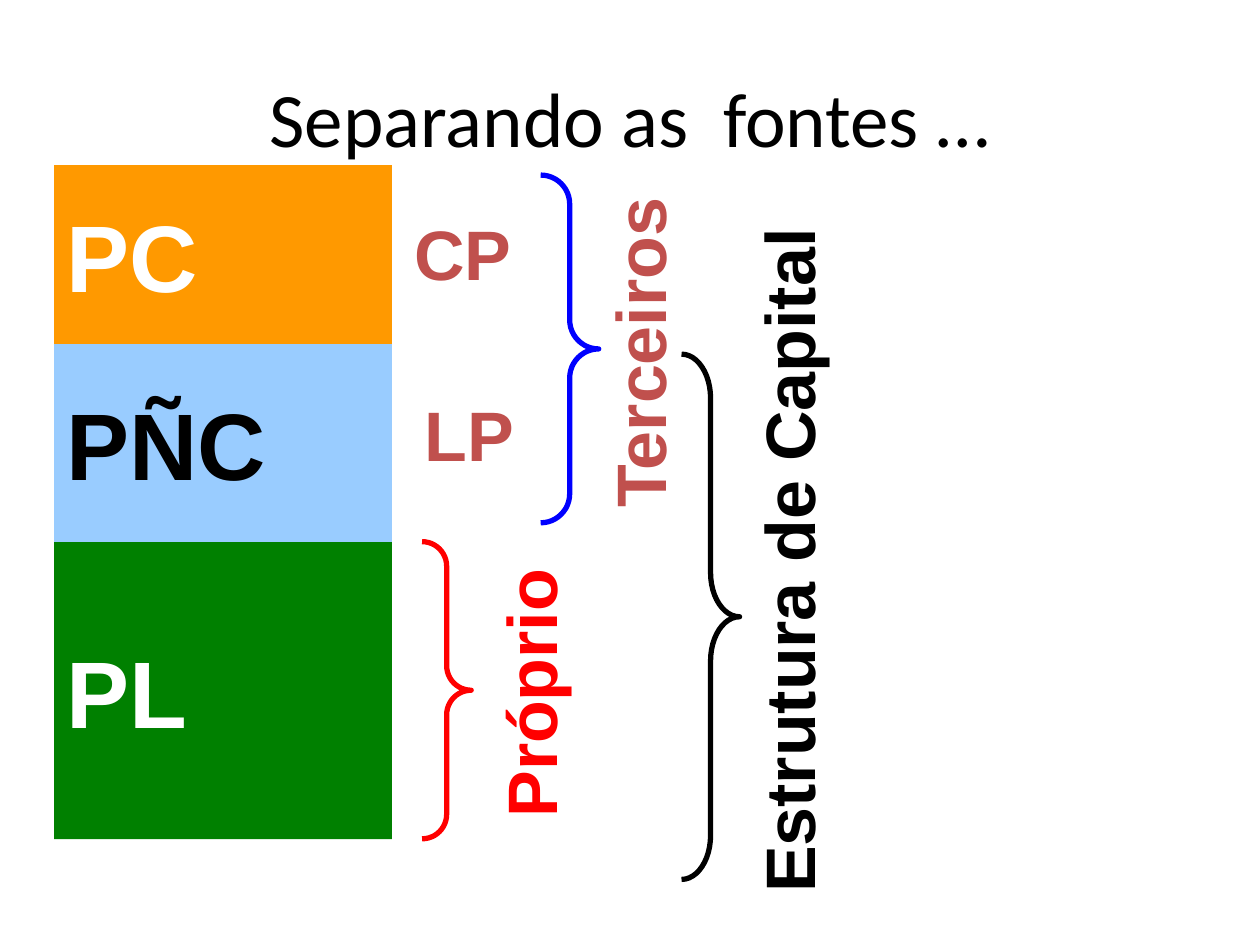
from pptx import Presentation
from pptx.dml.color import RGBColor
from pptx.enum.shapes import MSO_SHAPE as Shape
from pptx.enum.text import MSO_ANCHOR as Anchor, MSO_AUTO_SIZE as AutoSize, PP_ALIGN as Align
from pptx.util import Cm, Pt

COLORS = {
    "black": "000000", "white": "FFFFFF", "orange": "FF9900", "sky": "99CCFF",
    "green": "008000", "red": "FF0000", "blue": "0000FF", "brick": "C0504D",
}


def color(name):
    """Return the named colour."""
    return RGBColor.from_string(COLORS[name])


def write(shape, text, size, ink, font="Arial", bold=True, align=Align.LEFT):
    """Put one formatted paragraph in a shape."""
    para = shape.text_frame.paragraphs[0]
    para.text = text
    para.alignment = align
    para.font.name = font
    para.font.size = Pt(size)
    para.font.bold = bold
    para.font.color.rgb = color(ink)


def add_title(page, text):
    """Place and format the title placeholder."""
    title = page.shapes.title
    title.left, title.top, title.width, title.height = Cm(1.27), Cm(0.76), Cm(22.86), Cm(3.18)
    title.text_frame.vertical_anchor = Anchor.MIDDLE
    write(title, text, 44, "black", "Calibri", False, Align.CENTER)


def add_block(page, text, top, height, fill, ink):
    """Add one filled block of the balance sheet column."""
    block = page.shapes.add_shape(Shape.RECTANGLE, Cm(1.09), Cm(top), Cm(6.81), Cm(height))
    block.shadow.inherit = False
    block.fill.solid()
    block.fill.fore_color.rgb = color(fill)
    block.line.fill.background()
    block.text_frame.word_wrap = True
    block.text_frame.vertical_anchor = Anchor.MIDDLE
    write(block, text, 54, ink)


def add_brace(page, left, top, width, height, ink, curve=0.5):
    """Add a right brace outline."""
    brace = page.shapes.add_shape(Shape.RIGHT_BRACE, Cm(left), Cm(top), Cm(width), Cm(height))
    brace.shadow.inherit = False
    brace.adjustments[0] = curve
    brace.fill.background()
    brace.line.color.rgb = color(ink)
    brace.line.width = Pt(3)


def add_label(page, text, left, top, width, ink, rotation=0):
    """Add a bold label, turned if asked."""
    box = page.shapes.add_textbox(Cm(left), Cm(top), Cm(width), Cm(1.96))
    box.rotation = rotation
    box.text_frame.word_wrap = False
    box.text_frame.auto_size = AutoSize.SHAPE_TO_FIT_TEXT
    write(box, text, 40, ink)


def main():
    """Build the slide on the sources of capital."""
    deck = Presentation()
    deck.slide_width, deck.slide_height = Cm(25.4), Cm(19.05)
    page = deck.slides.add_slide(deck.slide_layouts[5])
    add_title(page, "Separando as  fontes …")

    top = 3.33
    for text, height, fill, ink in (
        ("PC", 3.61, "orange", "white"),
        ("PÑC", 3.99, "sky", "black"),
        ("PL", 5.99, "green", "white"),
    ):
        add_block(page, text, top, height, fill, ink)
        top += height

    add_brace(page, 8.51, 10.92, 0.99, 5.99, "red")
    add_brace(page, 10.9, 3.53, 1.17, 7.01, "blue")
    add_label(page, "Terceiros", 9.45, 6.07, 6.86, "brick", 270)
    add_label(page, "Próprio", 7.92, 12.98, 5.54, "red", 270)
    add_label(page, "CP", 8.1, 4.11, 2.46, "brick")
    add_label(page, "LP", 8.31, 7.77, 2.31, "brick")
    add_brace(page, 13.74, 7.14, 1.17, 10.59, "black", 0.76)
    add_label(page, "Estrutura de Capital", 8.92, 10.31, 13.92, "black", 270)

    deck.save("out.pptx")


if __name__ == "__main__":
    main()
